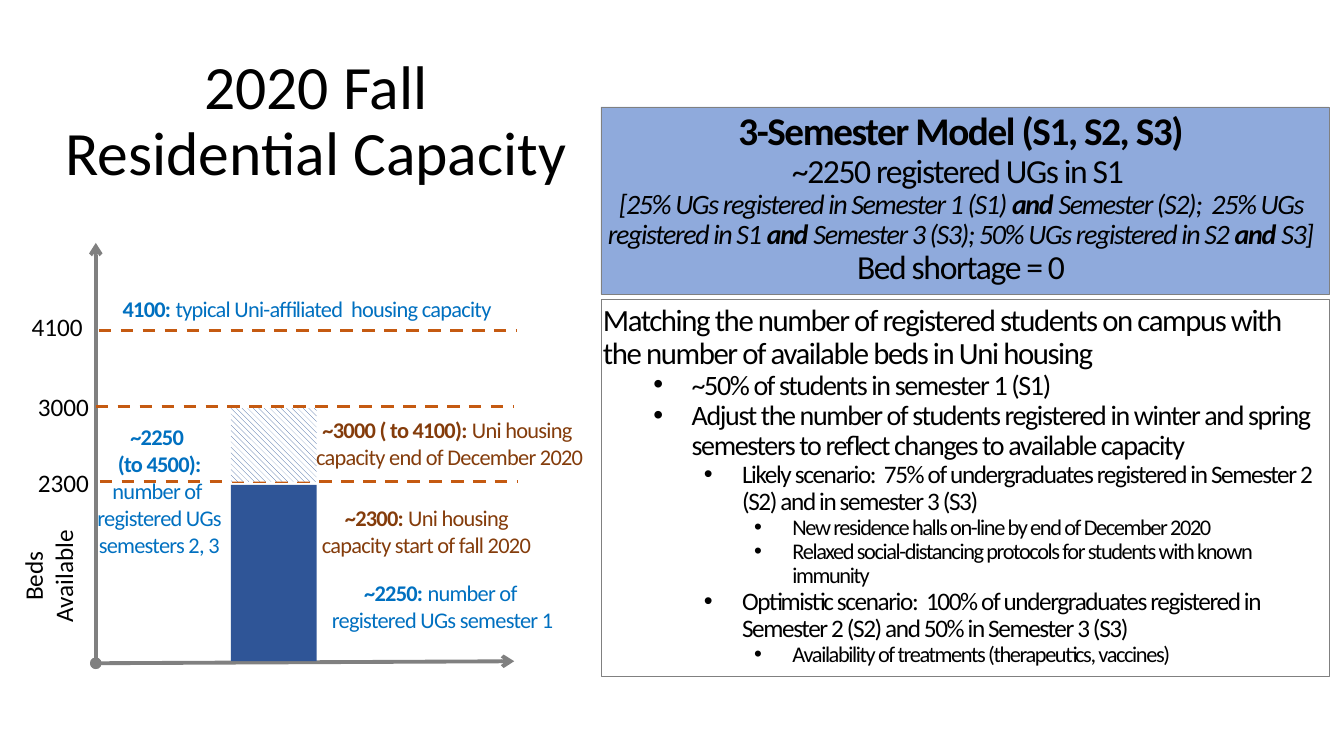
from dataclasses import dataclass
from lxml import etree
from pptx import Presentation
from pptx import util as u
from pptx.dml.color import RGBColor as RGB
from pptx.enum import dml, shapes, text
from pptx.oxml import ns


@dataclass(frozen=True)
class Theme:
    font: str = "Calibri"
    black: str = "000000"
    white: str = "FFFFFF"
    gray: str = "808080"
    pale: str = "8FAADC"
    navy: str = "2F5597"
    blue: str = "0070C0"
    rust: str = "C55A11"
    brown: str = "843C0B"
    title: int = 44
    head: int = 28
    lead: int = 24
    main: int = 22
    item: int = 20
    sub: int = 18
    note: int = 16


look = Theme()
mid, left, right = text.PP_ALIGN.CENTER, text.PP_ALIGN.LEFT, text.PP_ALIGN.RIGHT


def write(frame, rows, hue, align=mid, space=1, track=0):
    frame.auto_size = text.MSO_AUTO_SIZE.NONE
    for n, (size, runs) in enumerate(rows):
        par = frame.add_paragraph() if n else frame.paragraphs[0]
        par.alignment = align
        par.line_spacing = space
        par.space_before = par.space_after = u.Pt(0)
        for words, style in runs:
            run = par.add_run()
            run.text = words
            font = run.font
            font.name, font.size = look.font, u.Pt(size)
            font.bold, font.italic = "b" in style, "i" in style
            font.color.rgb = RGB.from_string(hue)
            if track:
                run._r.get_or_add_rPr().set("spc", str(track))


def draw(x1, y1, x2, y2, hue, width):
    line = slide.shapes.add_connector(
        shapes.MSO_CONNECTOR.STRAIGHT, *map(u.Inches, (x1, y1, x2, y2)))
    line.line.color.rgb = RGB.from_string(hue)
    line.line.width = u.Pt(width)
    etree.SubElement(line._element.spPr, ns.qn("a:effectLst"))
    return line


deck = Presentation()
deck.slide_width, deck.slide_height = u.Inches(13.33), u.Inches(7.5)
slide = deck.slides.add_slide(deck.slide_layouts[1])

title, body = slide.placeholders
title.left, title.top, title.width, title.height = map(u.Inches, (0.52, 0.99, 5.23, 0.45))
title.text_frame.vertical_anchor = text.MSO_ANCHOR.MIDDLE
write(title.text_frame, [(look.title, [("2020 Fall Residential Capacity", "")])],
      look.black, space=0.9)

head = slide.shapes.add_shape(
    shapes.MSO_SHAPE.RECTANGLE, *map(u.Inches, (5.96, 1.06, 7.22, 1.86)))
head.shadow.inherit = False
head.fill.solid()
head.fill.fore_color.rgb = RGB.from_string(look.pale)
body.left, body.top, body.width, body.height = map(u.Inches, (5.96, 2.97, 7.22, 3.74))

for panel in (head, body):
    panel.line.color.rgb = RGB.from_string(look.gray)
    panel.line.width = u.Pt(0.25)
    panel.text_frame.margin_left = u.Inches(0.02)
    panel.text_frame.vertical_anchor = text.MSO_ANCHOR.TOP
    panel.text_frame.word_wrap = True

write(head.text_frame, [
    (look.head, [("3-Semester Model (S1, S2, S3)", "b")]),
    (look.lead, [("~2250 registered UGs in S1 ", "")]),
    (look.item, [("[25% UGs registered in Semester 1 (S1) ", "i"), ("and ", "bi"),
                 ("Semester (S2);  25% UGs registered in S1 ", "i"), ("and ", "bi"),
                 ("Semester 3 (S3); 50% UGs registered in S2 ", "i"), ("and ", "bi"),
                 ("S3]", "i")]),
    (look.lead, [("Bed shortage = 0", "")]),
], look.black, space=0.9, track=-100)

points = [
    (0, "Matching the number of registered students on campus with the number of "
        "available beds in Uni housing"),
    (1, "~50% of students in semester 1 (S1)"),
    (1, "Adjust the number of students registered in winter and spring semesters to "
        "reflect changes to available capacity"),
    (2, "Likely scenario:  75% of undergraduates registered in Semester 2 (S2) and in "
        "semester 3 (S3)"),
    (3, "New residence halls on-line by end of December 2020"),
    (3, "Relaxed social-distancing protocols for students with known immunity"),
    (2, "Optimistic scenario:  100% of undergraduates registered in Semester 2 (S2) and "
        "50% in Semester 3 (S3)"),
    (3, "Availability of treatments (therapeutics, vaccines)"),
]
sizes = (look.main, look.item, look.sub, look.note)
write(body.text_frame, [(sizes[rank], [(words, "")]) for rank, words in points],
      look.black, left, 0.9, -100)
for par, (rank, words) in zip(body.text_frame.paragraphs, points):
    par.level = rank
    props = par._p.get_or_add_pPr()
    props.set("marL", str(u.Inches(0.38 + rank * 0.5) if rank else 0))
    props.set("indent", str(u.Inches(-0.38) if rank else 0))
    if rank:
        etree.SubElement(props, ns.qn("a:buFont")).set("typeface", "Arial")
        etree.SubElement(props, ns.qn("a:buChar")).set("char", "•")
    else:
        etree.SubElement(props, ns.qn("a:buNone"))

for x, y in ((5.1, 6.56), (0.95, 2.41)):
    axis = draw(0.95, 6.58, x, y, look.gray, 2.75)
    for end, kind in (("a:headEnd", "oval"), ("a:tailEnd", "arrow")):
        etree.SubElement(axis.line._get_or_add_ln(), ns.qn(end)).set("type", kind)

for x, y in ((0.99, 4.78), (0.95, 4.03), (0.98, 3.28)):
    draw(x, y, x + 4.15, y, look.rust, 2.25).line.dash_style = dml.MSO_LINE.DASH

for top, tall, hatch in ((4.81, 1.75, False), (4.05, 0.73, True)):
    bar = slide.shapes.add_shape(
        shapes.MSO_SHAPE.RECTANGLE, *map(u.Inches, (2.29, top, 0.85, tall)))
    bar.shadow.inherit = False
    bar.line.fill.background()
    if hatch:
        bar.fill.patterned()
        bar.fill.pattern = dml.MSO_PATTERN.WIDE_DOWNWARD_DIAGONAL
        bar.fill.back_color.rgb = RGB.from_string(look.white)
    else:
        bar.fill.solid()
    bar.fill.fore_color.rgb = RGB.from_string(look.navy)

labels = [
    ((3.14, 5.7, 2.5, 0.64), look.blue,
     [[("~2250: ", "b"), ("number of  registered UGs semester 1", "")]]),
    ((2.98, 4.95, 2.5, 0.64), look.brown,
     [[("~2300:", "b"), (" Uni housing capacity start of fall 2020", "")]]),
    ((2.91, 4.08, 3.1, 0.64), look.brown,
     [[("~3000 ( to 4100):", "b"), (" Uni housing ", "")],
      [("capacity end of December 2020", "")]]),
    ((0.85, 4.15, 1.46, 1.45), look.blue,
     [[("~2250 ", "b")],
      [("(to 4500): ", "b"), ("number of  registered UGs semesters 2, 3", "")]]),
    ((0.72, 2.88, 4.65, 0.37), look.blue,
     [[("4100: ", "b"), ("typical Uni-affiliated  housing capacity", "")]]),
]
for place, hue, rows in labels:
    box = slide.shapes.add_textbox(*map(u.Inches, place))
    box.text_frame.word_wrap = True
    write(box.text_frame, [(look.note, runs) for runs in rows], hue, track=-50)

for x, y, words in ((0.27, 4.59, "2300"), (0.27, 3.83, "3000"), (0.21, 3.04, "4100")):
    tick = slide.shapes.add_textbox(*map(u.Inches, (x, y, 0.71, 0.4)))
    tick.text_frame.word_wrap = False
    write(tick.text_frame, [(look.sub, [(words, "")])], look.black, right)

beds = slide.shapes.add_textbox(*map(u.Inches, (-0.3, 5.36, 1.56, 0.71)))
beds.rotation = 270
beds.text_frame.word_wrap = True
write(beds.text_frame, [(look.sub, [(words, "")]) for words in ("Beds", "Available")],
      look.black)

deck.save("out.pptx")
